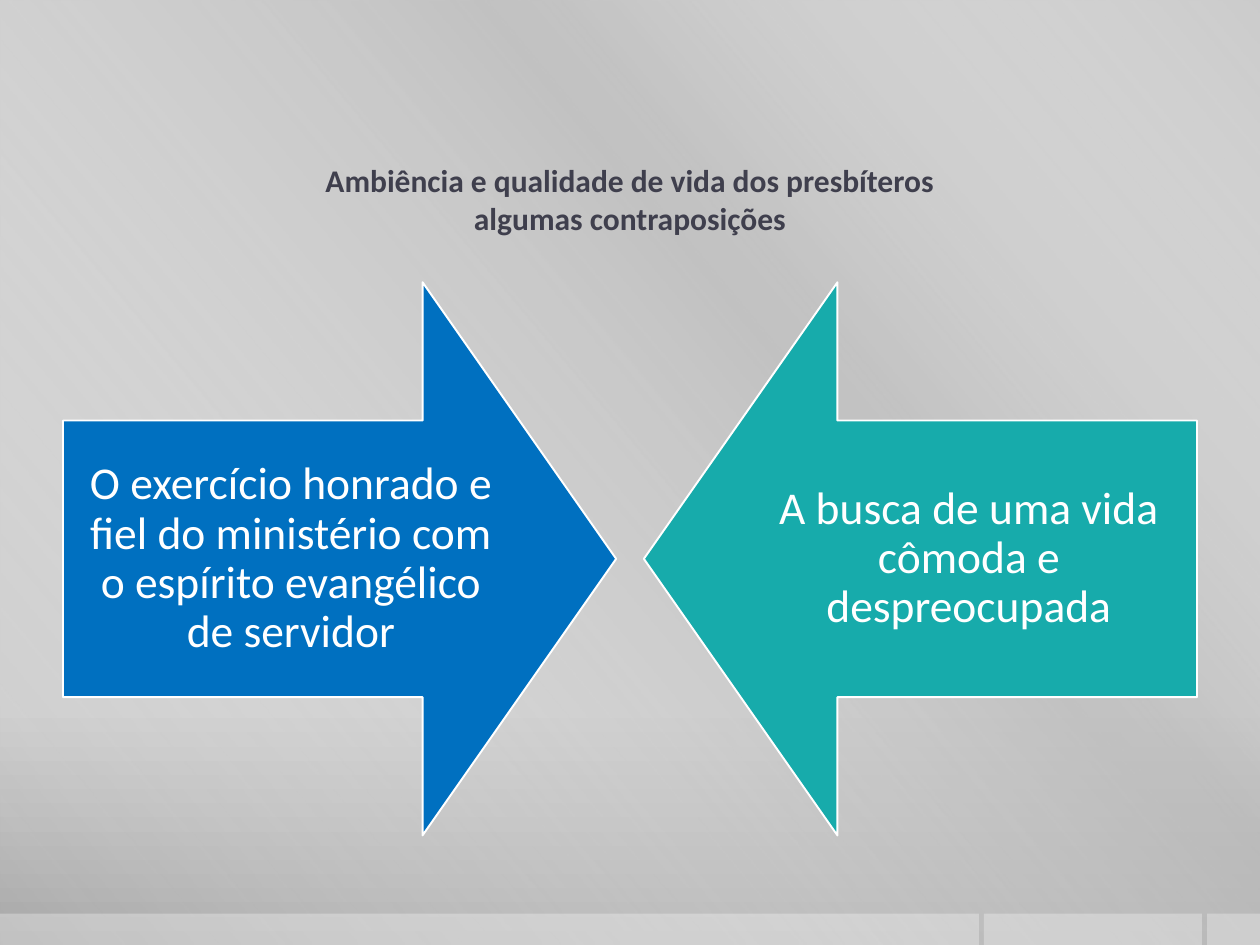
"""Build a slide with two opposing arrows that contrast ways of priestly life."""
from lxml import etree
from pptx import Presentation
from pptx.dml.color import RGBColor
from pptx.enum.shapes import MSO_SHAPE as Shape
from pptx.enum.text import MSO_ANCHOR as Anchor, PP_ALIGN as Align
from pptx.oxml.ns import qn
from pptx.util import Inches, Pt

WHITE = RGBColor(0xFF, 0xFF, 0xFF)
SILVER = RGBColor(0xBF, 0xBF, 0xBF)
LIGHT = RGBColor(0xCB, 0xCB, 0xCB)
MID = RGBColor(0xC8, 0xC8, 0xC8)
DARK = RGBColor(0xA7, 0xA7, 0xA7)
INK = RGBColor(0x3F, 0x3F, 0x4D)
BLUE = RGBColor(0x00, 0x70, 0xC0)
TEAL = RGBColor(0x17, 0xAB, 0xAB)


def blend(root, angle, stops):
    grad = root.find(".//" + qn("a:gradFill"))
    grad.find(qn("a:lin")).set("ang", str(angle * 60000))
    items = grad.find(qn("a:gsLst"))
    items.clear()
    for pos, color, alpha in stops:
        stop = etree.SubElement(items, qn("a:gs"), pos=str(pos * 1000))
        tint = etree.SubElement(stop, qn("a:srgbClr"), val=str(color))
        etree.SubElement(tint, qn("a:alpha"), val=str(alpha * 1000))


def write(text, left, top, width, height, size, color, bold=False, pad=(0, 0), space=1):
    box = slide.shapes.add_textbox(Inches(left), Inches(top), Inches(width), Inches(height))
    frame = box.text_frame
    frame.word_wrap = True
    frame.vertical_anchor = Anchor.MIDDLE
    frame.margin_left = frame.margin_right = Inches(pad[0])
    frame.margin_top = frame.margin_bottom = Inches(pad[1])
    para = frame.paragraphs[0]
    para.alignment = Align.CENTER
    para.line_spacing = space
    for index, line in enumerate(text.splitlines()):
        if index:
            para.add_line_break()
        run = para.add_run()
        run.text = line
        run.font.name = "Calibri"
        run.font.size = Pt(size)
        run.font.bold = bold
        run.font.color.rgb = color


deck = Presentation()
deck.slide_width, deck.slide_height = Inches(10), Inches(7.5)
slide = deck.slides.add_slide(deck.slide_layouts[6])

slide.background.fill.gradient()
blend(slide.element, 90, [(0, LIGHT, 100), (76, MID, 100), (100, DARK, 100)])

sheen = slide.shapes.add_shape(Shape.RECTANGLE, 0, 0, Inches(10), Inches(7.5))
sheen.shadow.inherit = False
sheen.line.fill.background()
sheen.fill.gradient()
blend(sheen.element, 140, [(0, WHITE, 0), (34, SILVER, 61), (38, SILVER, 76), (100, WHITE, 0)])

for left, width in [(9.58, 0.42), (7.81, 1.73), (0, 7.77)]:
    bar = slide.shapes.add_shape(
        Shape.RECTANGLE, Inches(left), Inches(7.25), Inches(width), Inches(0.25))
    bar.shadow.inherit = False
    bar.line.fill.background()
    bar.fill.solid()
    bar.fill.fore_color.rgb = WHITE
    tint = bar.element.spPr.find(".//" + qn("a:srgbClr"))
    etree.SubElement(tint, qn("a:alpha"), val="30000")

write("""Ambiência e qualidade de vida dos presbíteros
algumas contraposições""", 0.5, 1.08, 9, 1, size=18, color=INK, bold=True, pad=(0, 0.05))

SIDE = 4.39
SIDES = [
    (0.5, 0.5, 270, BLUE,
     "O exercício honrado e fiel do ministério com o espírito evangélico de servidor"),
    (5.11, 5.88, 90, TEAL, "A busca de uma vida cômoda e despreocupada"),
]
for left, inner, turn, color, text in SIDES:
    arrow = slide.shapes.add_shape(
        Shape.DOWN_ARROW, Inches(left), Inches(2.24), Inches(SIDE), Inches(SIDE))
    arrow.adjustments[0], arrow.adjustments[1] = 0.5, 0.35
    arrow.rotation = turn
    arrow.shadow.inherit = False
    arrow.fill.solid()
    arrow.fill.fore_color.rgb = color
    arrow.line.color.rgb = WHITE
    arrow.line.width = Pt(1.1)
    write(text, inner, 3.34, 3.62, 2.19, size=26, color=WHITE, pad=(0.2, 0.2), space=0.9)

deck.save("out.pptx")
